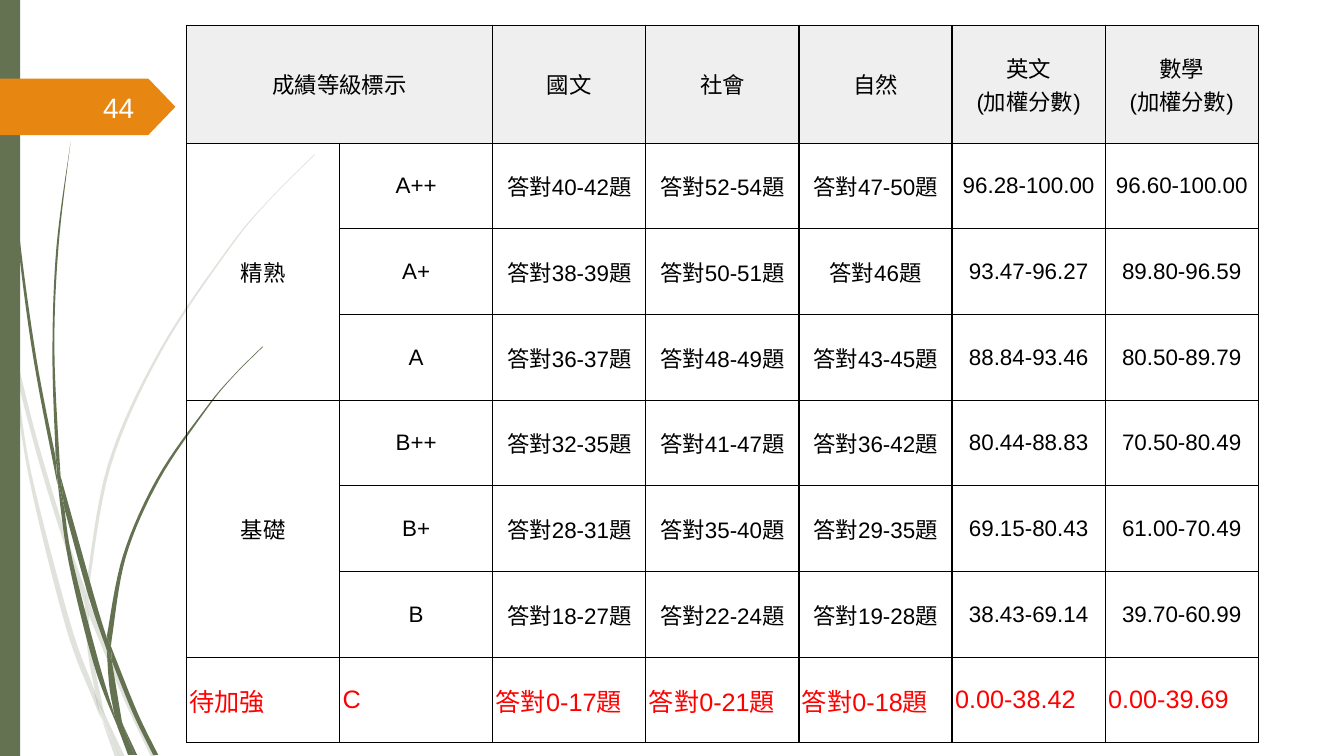
"""Build the slide of grade levels with the score range of each subject."""
from dataclasses import dataclass

from lxml import etree
from pptx import Presentation
from pptx.dml.color import RGBColor
from pptx.enum import shapes, text
from pptx.oxml import ns
from pptx.util import Inches, Pt

Point = tuple[float, float]
Edge = list[Point]


@dataclass(frozen=True)
class Theme:
    font: str = "Arial"
    green: str = "647252"
    orange: str = "E78712"
    header: str = "EFEFEF"
    black: str = "000000"
    red: str = "FF0000"
    white: str = "FEFFFF"
    body_size: int = 16
    weak_size: int = 18
    number_size: int = 20
    border: int = 1
    pale_opacity: int = 20


@dataclass(frozen=True)
class Blade:
    edges: list[Edge]
    pale: bool = False


THEME = Theme()
PALE_EDGES = [
    [[(0.11, 3.5), (0.09, 3.22), (0, 2.82)], [(0, 2.99), (0.1, 3.44)]],
    [[(0.14, 3.45), (0.36, 4.33), (0.62, 5.2), (0.85, 5.86)],
     [(0.84, 5.99), (0.58, 5.22), (0.36, 4.49), (0.17, 3.76)]],
    [[(0.88, 5.96), (1.27, 6.92), (1.55, 7.51)], [(1.5, 7.51), (1.23, 6.94), (0.88, 6.1)]],
    [[(1.05, 7.11), (1.24, 7.51)], [(1.19, 7.51)]],
    [[(0.11, 3.5), (0.28, 4.7), (0.65, 6.21), (0.92, 6.93), (1.01, 7.14)],
     [(0.99, 7.07), (0.93, 6.83), (0.7, 6.19), (0.31, 4.69), (0.17, 3.76)]],
    [[(0.84, 5.99), (0.87, 6.46), (0.96, 6.92), (1.05, 7.11)],
     [(1.03, 7.06), (0.91, 6.46), (0.88, 6.08)]],
    [[(0.88, 5.96)],
     [(0.88, 5.84), (1.1, 4.62), (1.6, 3.49), (2.29, 2.45), (2.68, 1.98), (3.12, 1.54)],
     [(3.12, 1.53), (2.68, 1.97), (2.28, 2.44), (1.58, 3.48), (1.07, 4.61), (0.85, 5.84)]],
    [[(1.01, 7.14), (1.14, 7.51)], [(1.19, 7.51)]],
    [[(0.88, 6.08), (0.88, 5.96)], [(0.85, 5.86), (0.84, 5.99)]],
    [[(0.93, 6.83), (0.99, 7.07), (1.19, 7.51)], [(1.05, 7.11), (0.96, 6.92)]],
]
DARK_EDGES = [
    [[(0.03, 0), (0.03, 0.48), (0.07, 1.1), (0.17, 2.33), (0.33, 3.55), (0.57, 4.81)],
     [(0.55, 4.53), (0.36, 3.55), (0.19, 2.32), (0.08, 1.09), (0.05, 0.48), (0.03, 0)]],
    [[(0.6, 4.72), (0.93, 5.9), (1.06, 6.33)], [(1.06, 6.45), (0.88, 5.92), (0.64, 5.05)]],
    [[(1.1, 6.41), (1.36, 7.06), (1.57, 7.49)], [(1.52, 7.49), (1.32, 7.08), (1.11, 6.56)]],
    [[(0.57, 4.77), (0.68, 5.57), (0.93, 6.59), (1.17, 7.22)],
     [(1.16, 7.17), (0.98, 6.57), (0.72, 5.56), (0.64, 5.05)]],
    [[(0.6, 4.72), (0.54, 3.49), (0.58, 2.45), (0.7, 1.41)],
     [(0.7, 1.41), (0.56, 2.45), (0.52, 3.49), (0.55, 4.49)]],
    [[(1.22, 7.19), (1.36, 7.49)], [(1.33, 7.49)]],
    [[(0.55, 4.49), (0.57, 4.77)], [(0.64, 5.05), (0.6, 4.72)]],
    [[(1.1, 6.41)],
     [(1.11, 6.33), (1.25, 5.52), (1.58, 4.76), (2.05, 4.06), (2.31, 3.74), (2.61, 3.44)],
     [(2.6, 3.44), (2.31, 3.73), (2.04, 4.05), (1.56, 4.74), (1.22, 5.51), (1.06, 6.31)]],
    [[(1.17, 7.22), (1.27, 7.49)], [(1.31, 7.49)]],
    [[(1.06, 6.45), (1.1, 6.91), (1.22, 7.19)], [(1.21, 7.16), (1.11, 6.56)]],
    [[(1.06, 6.31), (1.1, 6.41)], [(1.11, 6.56), (1.06, 6.45)]],
    [[(1.1, 6.91), (1.17, 7.22), (1.3, 7.49)], [(1.33, 7.49), (1.22, 7.19)]],
]
BLADES = [Blade(edges, True) for edges in PALE_EDGES] + [Blade(edges) for edges in DARK_EDGES]

GRADES = [
    ["成績等級標示", "", "國文", "社會", "自然", "英文\n(加權分數)", "數學\n(加權分數)"],
    ["精熟", "A++", "答對40-42題", "答對52-54題", "答對47-50題", "96.28-100.00", "96.60-100.00"],
    ["", "A+", "答對38-39題", "答對50-51題", "答對46題", "93.47-96.27", "89.80-96.59"],
    ["", "A", "答對36-37題", "答對48-49題", "答對43-45題", "88.84-93.46", "80.50-89.79"],
    ["基礎", "B++", "答對32-35題", "答對41-47題", "答對36-42題", "80.44-88.83", "70.50-80.49"],
    ["", "B+", "答對28-31題", "答對35-40題", "答對29-35題", "69.15-80.43", "61.00-70.49"],
    ["", "B", "答對18-27題", "答對22-24題", "答對19-28題", "38.43-69.14", "39.70-60.99"],
    ["待加強", "C", "答對0-17題", "答對0-21題", "答對0-18題", "0.00-38.42", "0.00-39.69"],
]
MERGES = [((0, 0), (0, 1)), ((1, 0), (3, 0)), ((4, 0), (6, 0))]


def smooth(edge: Edge, steps: int = 8) -> Edge:
    """Return points of a smooth curve through the given points."""
    if len(edge) < 3:
        return edge
    padded = [edge[0], *edge, edge[-1]]
    curve = [edge[0]]
    for before, start, end, after in zip(padded, padded[1:], padded[2:], padded[3:]):
        for step in range(1, steps + 1):
            t = step / steps
            curve.append(tuple(
                b + (c - a) / 2 * t + (a - 2.5 * b + 2 * c - d / 2) * t**2
                + (1.5 * (b - c) + (d - a) / 2) * t**3
                for a, b, c, d in zip(before, start, end, after)))
    return curve


def paint(shape, color: str) -> None:
    """Give a shape a plain fill without outline or shadow."""
    shape.shadow.inherit = False
    shape.fill.solid()
    shape.fill.fore_color.rgb = RGBColor.from_string(color)
    shape.line.fill.background()


def draw_blade(slide, blade: Blade) -> None:
    """Draw one blade of grass, see-through if it is pale."""
    outline = [(Inches(x), Inches(y)) for edge in blade.edges for x, y in smooth(edge)]
    builder = slide.shapes.build_freeform(*outline[0])
    builder.add_line_segments(outline[1:], close=True)
    shape = builder.convert_to_shape()
    paint(shape, THEME.green)
    if blade.pale:
        color = shape.fill._xPr.find(".//" + ns.qn("a:srgbClr"))
        etree.SubElement(color, ns.qn("a:alpha"), val=str(THEME.pale_opacity * 1000))


def write(paragraph, words: str, size: int, color: str, alignment) -> None:
    """Set the text of a paragraph and format its runs."""
    paragraph.text = words
    paragraph.alignment = alignment
    for run in paragraph.runs:
        run.font.name = THEME.font
        run.font.size = Pt(size)
        run.font.color.rgb = RGBColor.from_string(color)


def draw_page_number(slide) -> None:
    """Draw the side bar and the flag with the page number."""
    bar = slide.shapes.add_shape(shapes.MSO_SHAPE.RECTANGLE, 0, 0, Inches(0.2), Inches(7.5))
    paint(bar, THEME.green)
    flag = slide.shapes.add_shape(
        shapes.MSO_SHAPE.PENTAGON, 0, Inches(0.78), Inches(1.74), Inches(0.56))
    flag.adjustments[0] = 0.48
    paint(flag, THEME.orange)
    box = slide.shapes.add_textbox(Inches(0.58), Inches(0.86), Inches(0.85), Inches(0.4))
    box.text_frame.word_wrap = True
    box.text_frame.vertical_anchor = text.MSO_ANCHOR.MIDDLE
    write(box.text_frame.paragraphs[0], "44", THEME.number_size, THEME.white,
          text.PP_ALIGN.RIGHT)


def add_borders(cell) -> None:
    """Draw a line on all four sides of a cell."""
    properties = cell._tc.get_or_add_tcPr()
    for side in ("lnL", "lnR", "lnT", "lnB"):
        line = etree.SubElement(properties, ns.qn(f"a:{side}"), w=str(Pt(THEME.border)))
        fill = etree.SubElement(line, ns.qn("a:solidFill"))
        etree.SubElement(fill, ns.qn("a:srgbClr"), val=THEME.black)


def draw_grades(slide) -> None:
    """Draw the table of grades, with its weakest level in red."""
    table = slide.shapes.add_table(
        len(GRADES), len(GRADES[0]), Inches(1.85), Inches(0.25),
        Inches(10.63), Inches(7.12)).table
    table.first_row = table.horz_banding = False
    for index, row in enumerate(table.rows):
        row.height = Inches(0.85 if index else 1.17)
    for row_index, row in enumerate(GRADES):
        weak = row_index == len(GRADES) - 1
        size, color, alignment = (
            (THEME.weak_size, THEME.red, text.PP_ALIGN.LEFT) if weak
            else (THEME.body_size, THEME.black, text.PP_ALIGN.CENTER))
        for column_index, words in enumerate(row):
            cell = table.cell(row_index, column_index)
            add_borders(cell)
            cell.fill.background()
            if row_index == 0:
                cell.fill.solid()
                cell.fill.fore_color.rgb = RGBColor.from_string(THEME.header)
            cell.margin_left = cell.margin_right = Inches(0.03)
            cell.margin_top = cell.margin_bottom = Inches(0.03)
            cell.vertical_anchor = text.MSO_ANCHOR.MIDDLE
            write(cell.text_frame.paragraphs[0], words, size, color, alignment)
    for first, last in MERGES:
        table.cell(*first).merge(table.cell(*last))


def main() -> None:
    """Build and save the presentation."""
    presentation = Presentation()
    presentation.slide_width, presentation.slide_height = Inches(13.33), Inches(7.5)
    slide = presentation.slides.add_slide(presentation.slide_layouts[6])
    for blade in BLADES:
        draw_blade(slide, blade)
    draw_page_number(slide)
    draw_grades(slide)
    presentation.save("out.pptx")


if __name__ == "__main__":
    main()
